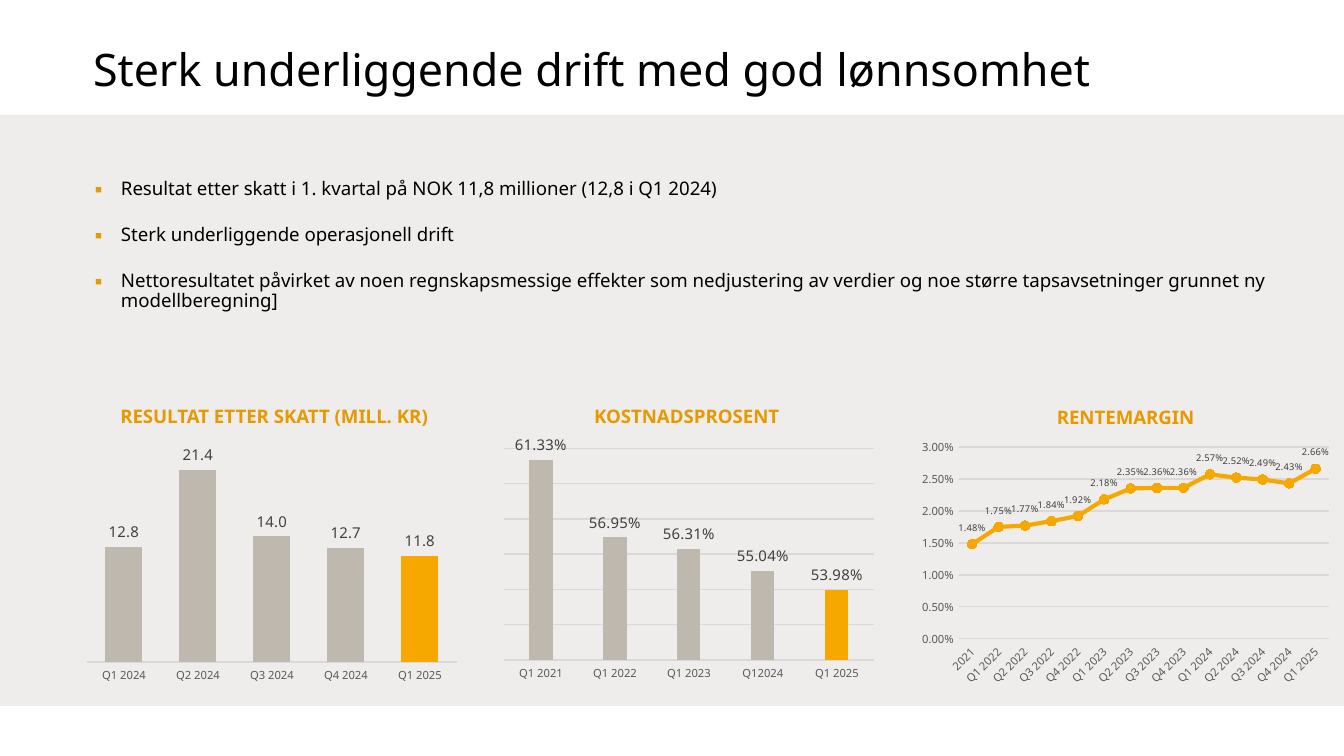
from lxml import etree
from pptx import Presentation
from pptx.chart.data import CategoryChartData
from pptx.dml.color import RGBColor
from pptx.enum.chart import XL_CHART_TYPE, XL_LABEL_POSITION, XL_MARKER_STYLE, XL_TICK_MARK
from pptx.enum.shapes import MSO_SHAPE
from pptx.enum.text import MSO_ANCHOR, MSO_AUTO_SIZE, PP_ALIGN
from pptx.oxml import parse_xml
from pptx.oxml.ns import nsdecls, qn
from pptx.util import Emu, Pt

EMU_PER_PX = 914400 / 134.4
FONT = "Noto Sans"
COLORS = {
    "black": "000000", "panel": "EEEDEC", "accent": "E79900", "highlight": "F6A800",
    "bar": "BFB8AF", "axis": "595959", "label": "404040", "grid": "D9D9D9",
}


def px(length):
    return Emu(round(length * EMU_PER_PX))


def color(name):
    return RGBColor.from_string(COLORS[name])


def place(shape, box):
    shape.left, shape.top, shape.width, shape.height = map(px, box)


def style_font(font, size, tone="black", bold=False):
    font.name, font.size, font.bold = FONT, Pt(size), bold
    font.color.rgb = color(tone)


def write(para, text, size, tone="black", bold=False, align=PP_ALIGN.LEFT):
    para.alignment = align
    span = para.add_run()
    span.text = text
    style_font(span.font, size, tone, bold)


def prepare_frame(shape, inset, anchor=MSO_ANCHOR.TOP):
    frame = shape.text_frame
    frame.word_wrap = True
    frame.auto_size = MSO_AUTO_SIZE.NONE
    frame.vertical_anchor = anchor
    if not inset:
        frame.margin_left = frame.margin_right = frame.margin_top = frame.margin_bottom = 0
    return frame


def add_panel(page, box):
    panel = page.shapes.add_shape(MSO_SHAPE.RECTANGLE, *map(px, box))
    panel.shadow.inherit = False
    panel.fill.solid()
    panel.fill.fore_color.rgb = color("panel")
    panel.line.fill.background()
    page.shapes._spTree.insert(2, panel._element)  # behind the placeholders


def fill_title(page, box, text):
    title = page.shapes.title
    place(title, box)
    frame = prepare_frame(title, inset=False, anchor=MSO_ANCHOR.MIDDLE)
    write(frame.paragraphs[0], text, 24)


def add_bullet(para, indent):
    properties = para._p.get_or_add_pPr()
    properties.set("marL", str(px(indent)))
    properties.set("indent", str(-px(indent)))
    tint = etree.SubElement(properties, qn("a:buClr"))
    etree.SubElement(tint, qn("a:srgbClr"), val=COLORS["accent"])
    etree.SubElement(properties, qn("a:buFont"), typeface=FONT)
    etree.SubElement(properties, qn("a:buChar"), char="▪")


def fill_body(page, box, items):
    body = page.placeholders[1]
    place(body, box)
    frame = prepare_frame(body, inset=False)
    for index, item in enumerate(items):
        para = frame.add_paragraph() if index else frame.paragraphs[0]
        add_bullet(para, 26)
        para.space_before = Pt(14 if index else 0)
        para.line_spacing = 0.88
        write(para, item, 10)


def add_caption(page, box, text):
    caption = page.shapes.add_textbox(*map(px, box))
    frame = prepare_frame(caption, inset=True)
    write(frame.paragraphs[0], text, 10, tone="accent", bold=True, align=PP_ALIGN.CENTER)


def set_plot_box(chart, box, plot_box):
    """Fix the inner plot area, given in px from the chart's corner."""
    fractions = [part / whole for part, whole in zip(plot_box, box[2:] * 2)]
    values = "".join(f'<c:{tag} val="{value:.4f}"/>' for tag, value in zip("xywh", fractions))
    layout = parse_xml(
        f'<c:layout {nsdecls("c")}><c:manualLayout><c:layoutTarget val="inner"/>'
        f'<c:xMode val="edge"/><c:yMode val="edge"/>{values}</c:manualLayout></c:layout>'
    )
    area = chart._chartSpace.chart.plotArea
    for old in area.findall(qn("c:layout")):
        area.remove(old)
    area.insert(0, layout)


def style_axes(chart, low, high, step, grid):
    category, value = chart.category_axis, chart.value_axis
    for axis in (category, value):
        axis.major_tick_mark = axis.minor_tick_mark = XL_TICK_MARK.NONE
        style_font(axis.tick_labels.font, 6, "axis")
    category.format.line.color.rgb = color("grid")
    category.format.line.width = Pt(0.75)
    value.minimum_scale, value.maximum_scale, value.major_unit = low, high, step
    value.format.line.fill.background()
    value.has_major_gridlines = grid
    if grid:
        value.major_gridlines.format.line.color.rgb = color("grid")
        value.major_gridlines.format.line.width = Pt(0.75)


def add_chart_panel(page, box, kind, points, number_format, caption, caption_span,
                    plot_box, scale, grid=True, label_size=8):
    """Place a caption above a one-series chart and return the chart."""
    left, top = box[:2]
    offset, width = caption_span
    add_caption(page, (left + offset, top - 36, width, 36), caption)
    data = CategoryChartData(number_format=number_format)
    data.categories = list(points)
    data.add_series("Series 1", points.values())
    chart = page.shapes.add_chart(kind, *map(px, box), data).chart
    chart.has_legend = chart.has_title = False
    style_font(chart.font, 10)
    style_axes(chart, *scale, grid)
    set_plot_box(chart, box, plot_box)

    plot = chart.plots[0]
    plot.vary_by_categories = False
    plot.has_data_labels = True
    labels = plot.data_labels
    labels.show_value = True
    labels.number_format, labels.number_format_is_linked = number_format, False
    is_line = kind == XL_CHART_TYPE.LINE_MARKERS
    labels.position = XL_LABEL_POSITION.ABOVE if is_line else XL_LABEL_POSITION.OUTSIDE_END
    style_font(labels.font, label_size, "label")
    return chart


def add_column_panel(page, box, gap, **settings):
    chart = add_chart_panel(page, box, XL_CHART_TYPE.COLUMN_CLUSTERED, **settings)
    chart.value_axis.visible = False
    plot = chart.plots[0]
    plot.gap_width, plot.overlap = gap, -27
    series = plot.series[0]
    last = series.points[len(settings["points"]) - 1]
    for part, tone in ((series, "bar"), (last, "highlight")):
        part.format.fill.solid()
        part.format.fill.fore_color.rgb = color(tone)


def add_line_panel(page, box, **settings):
    chart = add_chart_panel(page, box, XL_CHART_TYPE.LINE_MARKERS, **settings)
    chart.value_axis.tick_labels.number_format = settings["number_format"]
    chart.value_axis.tick_labels.number_format_is_linked = False
    chart.category_axis._element.txPr.bodyPr.set("rot", "-2700000")
    series = chart.plots[0].series[0]
    series.smooth = False
    series.format.line.color.rgb = color("highlight")
    series.format.line.width = Pt(2.25)
    marker = series.marker
    marker.style, marker.size = XL_MARKER_STYLE.CIRCLE, 5
    marker.format.fill.solid()
    marker.format.fill.fore_color.rgb = color("accent")
    marker.format.line.color.rgb = color("highlight")


def main():
    deck = Presentation()
    deck.slide_width, deck.slide_height = px(1344), px(756)
    page = deck.slides.add_slide(deck.slide_layouts[1])
    add_panel(page, (0, 115, 1344, 591))
    fill_title(page, (93, 42, 1034, 54), "Sterk underliggende drift med god lønnsomhet")
    fill_body(page, (95, 180, 1187, 192), [
        "Resultat etter skatt i 1. kvartal på NOK 11,8 millioner (12,8 i Q1 2024)",
        "Sterk underliggende operasjonell drift",
        "Nettoresultatet påvirket av noen regnskapsmessige effekter som nedjustering av verdier "
        "og noe større tapsavsetninger grunnet ny modellberegning]",
    ])
    quarters = [f"Q{quarter} {year}" for year in (2022, 2023, 2024) for quarter in (1, 2, 3, 4)]
    margins = [0.0148, 0.0175, 0.0177, 0.0184, 0.0192, 0.0218, 0.0235,
               0.0236, 0.0236, 0.0257, 0.0252, 0.0249, 0.0243, 0.0266]
    add_line_panel(
        page, (914, 435, 423, 257), caption="RENTEMARGIN", caption_span=(14, 395),
        points=dict(zip(["2021", *quarters, "Q1 2025"], margins)), number_format="0.00%",
        plot_box=(45, 12, 370, 192), scale=(0, 0.03, 0.005), label_size=5)
    add_column_panel(
        page, (79, 434, 386, 255), gap=100, caption="RESULTAT ETTER SKATT (MILL. KR)",
        caption_span=(2, 386), number_format="#,##0.0",
        points=dict(zip([*quarters[-4:], "Q1 2025"], [12.8, 21.4, 14, 12.7, 11.8])),
        plot_box=(8, 4, 370, 224), scale=(0, 25, 5), grid=False)
    add_column_panel(
        page, (496, 434, 386, 251), gap=219, caption="KOSTNADSPROSENT",
        caption_span=(-7, 395), number_format="0.00%",
        points={"Q1 2021": 0.6133, "Q1 2022": 0.5695, "Q1 2023": 0.5631,
                "Q12024": 0.5504, "Q1 2025": 0.5398},
        plot_box=(8, 13, 370, 213), scale=(0.5, 0.62, 0.02))
    deck.save("out.pptx")


if __name__ == "__main__":
    main()
